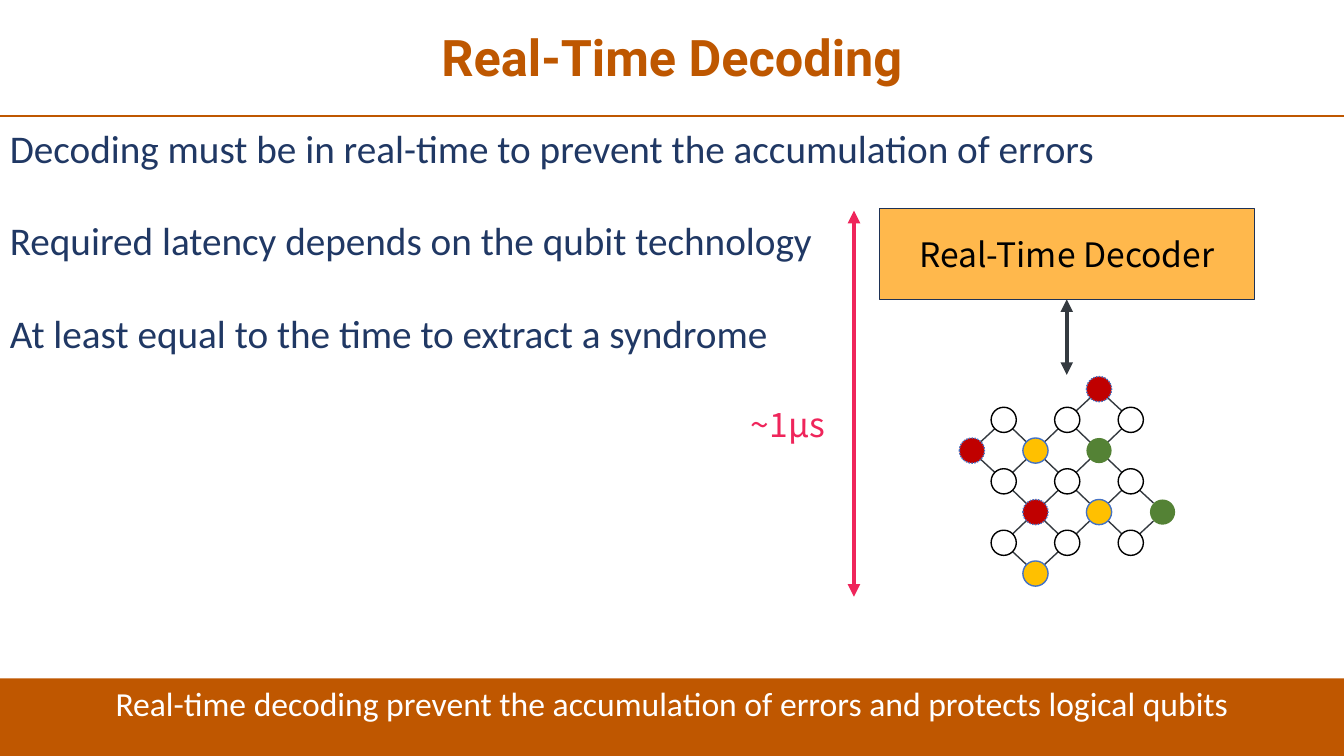
from dataclasses import dataclass
from itertools import product

from lxml import etree
from pptx import Presentation
from pptx.dml.color import RGBColor
from pptx.enum.dml import MSO_LINE
from pptx.enum.shapes import MSO_CONNECTOR, MSO_SHAPE
from pptx.enum.text import MSO_ANCHOR, MSO_AUTO_SIZE, PP_ALIGN
from pptx.oxml.ns import qn
from pptx.util import Inches, Pt

STRAIGHT = MSO_CONNECTOR.STRAIGHT
RECTANGLE, OVAL = MSO_SHAPE.RECTANGLE, MSO_SHAPE.OVAL
LEFT, CENTER = PP_ALIGN.LEFT, PP_ALIGN.CENTER
TOP, MIDDLE = MSO_ANCHOR.TOP, MSO_ANCHOR.MIDDLE
FIXED = MSO_AUTO_SIZE.NONE
DOTTED = MSO_LINE.ROUND_DOT
BOTTOM_SITE = 2
TITLE_ONLY = 5


@dataclass(frozen=True)
class Theme:
    title: str = "BE5700"
    band: str = "BF5700"
    body: str = "203864"
    white: str = "FFFFFF"
    black: str = "000000"
    link: str = "343A40"
    latency: str = "EF255B"
    decoder: str = "FFB84C"
    decoder_edge: str = "1E3256"
    check_edge: str = "4472C4"
    green: str = "548235"
    yellow: str = "FFC000"
    red: str = "C00000"
    title_font: str = "Roboto"
    body_font: str = "Calibri"
    label_font: str = "Noto Sans CJK JP"
    title_size: int = 36
    body_size: int = 28
    label_size: int = 24


THEME = Theme()


def rgb(value):
    return RGBColor.from_string(value)


def place(shape, box):
    shape.left, shape.top, shape.width, shape.height = map(Inches, box)


def write(shape, text, *, size, color, font, bold=False, align=LEFT, anchor=TOP, spacing=None):
    frame = shape.text_frame
    frame.word_wrap = True
    frame.auto_size = FIXED
    frame.vertical_anchor = anchor
    para = frame.paragraphs[0]
    para.alignment = align
    para.line_spacing = spacing
    span = para.add_run()
    span.text = text
    span.font.size = Pt(size)
    span.font.name = font
    span.font.bold = bold
    span.font.color.rgb = rgb(color)


def add_text(page, box, text, **style):
    shape = page.shapes.add_textbox(*map(Inches, box))
    write(shape, text, **style)


def add_filled(page, kind, box, fill, edge=None, dash=None):
    shape = page.shapes.add_shape(kind, *map(Inches, box))
    shape.shadow.inherit = False
    shape.fill.solid()
    shape.fill.fore_color.rgb = rgb(fill)
    if edge:
        shape.line.color.rgb = rgb(edge)
        shape.line.width = Pt(1)
        if dash:
            shape.line.dash_style = dash
    else:
        shape.line.fill.background()
    return shape


def add_line(page, start, end, color, width, arrows=False):
    line = page.shapes.add_connector(STRAIGHT, *map(Inches, (*start, *end)))
    line.line.color.rgb = rgb(color)
    line.line.width = Pt(width)
    if arrows:
        outline = line.line._get_or_add_ln()
        for tag in ("a:headEnd", "a:tailEnd"):
            etree.SubElement(outline, qn(tag), type="triangle")
    etree.SubElement(line._element.spPr, qn("a:effectLst"))
    return line


def add_header(page, box):
    left, top, width, height = box
    title = page.shapes.title
    place(title, (left + 0.09, top + 0.04, width - 0.18, height - 0.04))
    write(title, "Real-Time Decoding", size=THEME.title_size, color=THEME.title,
          font=THEME.title_font, bold=True, align=CENTER, anchor=MIDDLE, spacing=0.9)
    bottom = top + height
    add_line(page, (left, bottom), (left + width, bottom), THEME.band, 1.5)


def add_statements(page, box):
    left, top, width, pitch = box
    statements = (
        "Decoding must be in real-time to prevent the accumulation of errors",
        "Required latency depends on the qubit technology",
        "At least equal to the time to extract a syndrome",
    )
    for index, text in enumerate(statements):
        line_width = 8.27 if index else width
        add_text(page, (left, top + index * pitch, line_width, 0.57), text,
                 size=THEME.body_size, color=THEME.body, font=THEME.body_font)


def add_lattice(page, box):
    left, top, width, height = box
    size, count, trim = 0.25, 3, 0.09
    step_x, step_y = (width - size) / (count - 1), (height - size) / (count - 1)
    checks = {
        (-0.5, 0.5): THEME.red, (0.5, 1.5): THEME.red, (1.5, -0.5): THEME.red,
        (0.5, 0.5): THEME.yellow, (1.5, 1.5): THEME.yellow, (0.5, 2.5): THEME.yellow,
        (1.5, 0.5): THEME.green, (2.5, 1.5): THEME.green,
    }
    data_qubits = list(product(range(count), repeat=2))

    def corner(spot):
        return left + spot[0] * step_x, top + spot[1] * step_y

    def link(first, second):
        (x1, y1), (x2, y2) = corner(first), corner(second)
        dx = trim if x2 > x1 else -trim
        dy = trim if y2 > y1 else -trim
        half = size / 2
        add_line(page, (x1 + half + dx, y1 + half + dy),
                 (x2 + half - dx, y2 + half - dy), THEME.link, 1)

    def node(spot, fill, edge=None, dash=None):
        add_filled(page, OVAL, (*corner(spot), size, size), fill, edge, dash)

    for check in checks:
        near = [(check[0] + dx, check[1] + dy) for dx, dy in product((-0.5, 0.5), repeat=2)]
        near = [spot for spot in near if spot in data_qubits]
        if len(near) == 4:
            link(near[0], near[3])
            link(near[1], near[2])
        else:
            for spot in near:
                link(check, spot)
    for spot in data_qubits:
        node(spot, THEME.white, THEME.black)
    for spot, fill in checks.items():
        edge = None if fill == THEME.green else THEME.check_edge
        node(spot, fill, edge, DOTTED if fill == THEME.red else None)


def add_decoding_diagram(page, box):
    left, top, width, height = box
    label_style = {"size": THEME.label_size, "font": THEME.label_font}
    decoder = add_filled(page, RECTANGLE, (left + 1.37, top, width - 1.37, 0.9),
                         THEME.decoder, THEME.decoder_edge)
    write(decoder, "Real-Time Decoder", color=THEME.black, align=CENTER,
          anchor=MIDDLE, **label_style)
    middle = left + 1.37 + (width - 1.37) / 2
    exchange = add_line(page, (middle, top + 0.9), (middle, top + 1.65),
                        THEME.link, 3, arrows=True)
    exchange.begin_connect(decoder, BOTTOM_SITE)
    add_lattice(page, (left + 2.48, top + 1.97, 1.51, 1.47))
    add_line(page, (left + 1.12, top + 0.02), (left + 1.12, top + height),
             THEME.latency, 3, arrows=True)
    add_text(page, (left, top + 1.89, 1.06, 0.5), "~1μs", color=THEME.latency, **label_style)


def add_takeaway(page, box):
    band = add_filled(page, RECTANGLE, box, THEME.band)
    write(band, "Real-time decoding prevent the accumulation of errors and protects logical qubits",
          size=THEME.label_size, color=THEME.white, font=THEME.body_font, align=CENTER)


def main():
    deck = Presentation()
    deck.slide_width, deck.slide_height = Inches(13.33), Inches(7.5)
    page = deck.slides.add_slide(deck.slide_layouts[TITLE_ONLY])
    add_header(page, (0, 0, 13.33, 1.15))
    add_takeaway(page, (0, 6.73, 13.33, 0.77))
    add_decoding_diagram(page, (7.35, 2.07, 5.09, 3.85))
    add_statements(page, (0, 1.18, 13.33, 0.92))
    deck.save("out.pptx")


if __name__ == "__main__":
    main()
